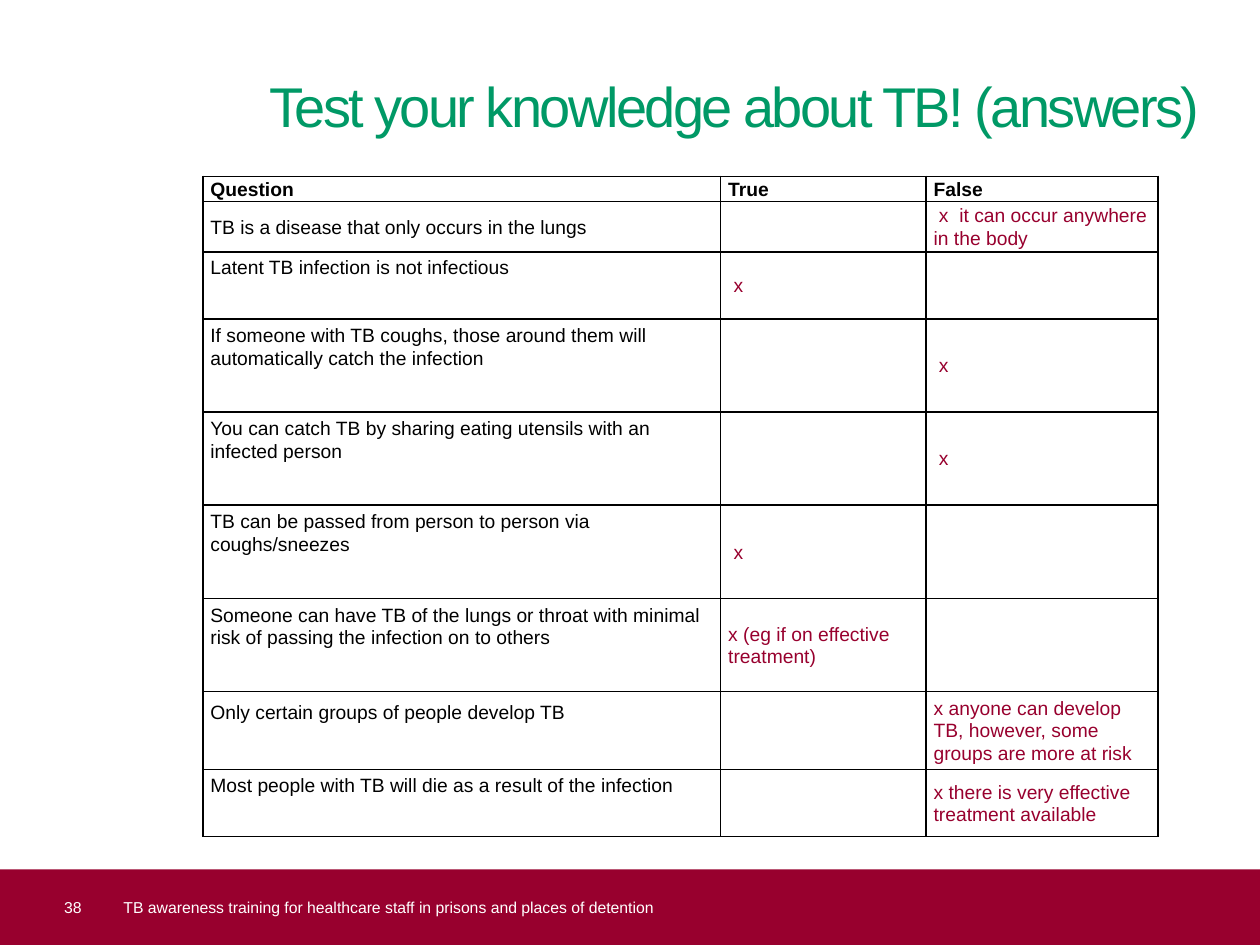
"""Build the TB knowledge test answers slide."""
import pptx
import pptx.dml.color
import pptx.enum.shapes
import pptx.enum.text
import pptx.oxml
import pptx.oxml.ns
import pptx.util
from pptx.util import Inches

BLACK, CRIMSON, GREEN, WHITE = "000000", "98002E", "009966", "FFFFFF"
MIDDLE = pptx.enum.text.MSO_ANCHOR.MIDDLE
TOP = pptx.enum.text.MSO_ANCHOR.TOP


def color(value):
    return pptx.dml.color.RGBColor.from_string(value)


def add_run(paragraph, text, size, text_color, bold=False):
    run = paragraph.add_run()
    run.text = text
    run.font.name = "Arial"
    run.font.size = pptx.util.Pt(size)
    run.font.bold = bold
    run.font.color.rgb = color(text_color)
    return run


presentation = pptx.Presentation()
presentation.slide_width = Inches(10)
presentation.slide_height = Inches(7.5)
slide = presentation.slides.add_slide(presentation.slide_layouts[5])

title = slide.shapes.title
title.left, title.top = Inches(2.09), Inches(0.52)
title.width, title.height = Inches(7.48), Inches(0.66)
frame = title.text_frame
frame.margin_left = frame.margin_right = frame.margin_bottom = 0
frame.margin_top = Inches(0.05)
frame.vertical_anchor = TOP
frame.auto_size = pptx.enum.text.MSO_AUTO_SIZE.NONE
paragraph = frame.paragraphs[0]
paragraph.alignment = pptx.enum.text.PP_ALIGN.CENTER
run = add_run(paragraph, "Test your knowledge about TB! (answers)", 32, GREEN)
run.font._element.set("spc", "-150")

footer_bar = slide.shapes.add_shape(
    pptx.enum.shapes.MSO_SHAPE.RECTANGLE, 0, Inches(6.9), Inches(10), Inches(0.6))
footer_bar.shadow.inherit = False
footer_bar.fill.solid()
footer_bar.fill.fore_color.rgb = color(CRIMSON)
footer_bar.line.fill.background()
footer_text = slide.shapes.add_textbox(Inches(0.98), Inches(6.9), Inches(8.43), Inches(0.6))
for shape, left_margin, text in [
    (footer_bar, 0.51, "38"),
    (footer_text, 0, "TB awareness training for healthcare staff in prisons and places of detention"),
]:
    frame = shape.text_frame
    frame.word_wrap = True
    frame.vertical_anchor = MIDDLE
    frame.margin_left = Inches(left_margin)
    frame.margin_top = frame.margin_right = frame.margin_bottom = 0
    frame.paragraphs[0].alignment = pptx.enum.text.PP_ALIGN.LEFT
    add_run(frame.paragraphs[0], text, 9, WHITE)

# Each row: height, top offset of the question (None centres it), then the cell texts.
rows = [
    (0.2, None, "Question", "True", "False"),
    (0.4, None, "TB is a disease that only occurs in the lungs", "",
     " x  it can occur anywhere in the body"),
    (0.53, 0.03, "Latent TB infection is not infectious", " x", ""),
    (0.74, 0.04, "If someone with TB coughs, those around them will automatically catch the infection",
     "", " x"),
    (0.74, 0.04, "You can catch TB by sharing eating utensils with an infected person", "", " x"),
    (0.74, 0.04, "TB can be passed from person to person via coughs/sneezes", " x", ""),
    (0.74, 0.04, "Someone can have TB of the lungs or throat with minimal risk of passing "
     "the infection on to others", "x (eg if on effective treatment)", ""),
    (0.62, 0.07, "Only certain groups of people develop TB", "",
     "x anyone can develop TB, however, some groups are more at risk"),
    (0.53, 0.03, "Most people with TB will die as a result of the infection", "",
     "x there is very effective treatment available"),
]
column_widths = [4.11, 1.63, 1.84]
table = slide.shapes.add_table(
    len(rows), len(column_widths), Inches(1.61), Inches(1.4),
    Inches(sum(column_widths)), Inches(sum(row[0] for row in rows))).table
table.first_row = False
table.horz_banding = False
for column, width in zip(table.columns, column_widths):
    column.width = Inches(width)

for row_index, (height, question_offset, *texts) in enumerate(rows):
    table.rows[row_index].height = Inches(height)
    for column_index, text in enumerate(texts):
        cell = table.cell(row_index, column_index)
        cell.margin_left = cell.margin_right = Inches(0.06)
        cell.margin_top = cell.margin_bottom = 0
        cell.vertical_anchor = MIDDLE
        if column_index == 0 and question_offset is not None:
            cell.vertical_anchor = TOP
            cell.margin_top = Inches(question_offset)
        properties = cell._tc.get_or_add_tcPr()
        for side in ("lnL", "lnR", "lnT", "lnB"):
            properties.append(pptx.oxml.parse_xml(
                f'<a:{side} {pptx.oxml.ns.nsdecls("a")} w="12700"><a:solidFill>'
                f'<a:srgbClr val="{BLACK}"/></a:solidFill></a:{side}>'))
        cell.fill.background()
        if text:
            paragraph = cell.text_frame.paragraphs[0]
            paragraph.line_spacing = 1.06
            paragraph.space_after = pptx.util.Pt(8)
            is_header = row_index == 0
            text_color = BLACK if is_header or column_index == 0 else CRIMSON
            add_run(paragraph, text, 11, text_color, is_header)

presentation.save("out.pptx")
